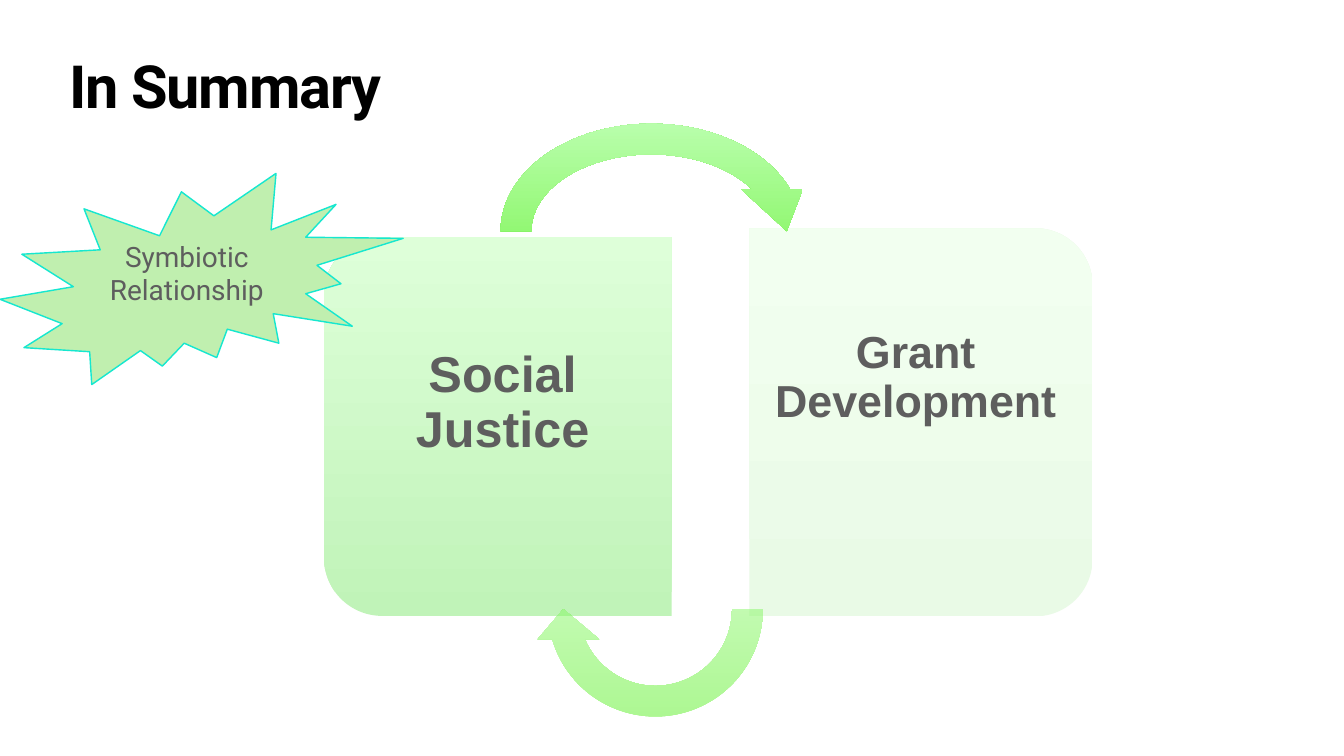
from dataclasses import dataclass

from lxml.etree import SubElement
from pptx import Presentation
from pptx.dml.color import RGBColor
from pptx.enum.shapes import MSO_SHAPE
from pptx.enum.text import MSO_ANCHOR, PP_ALIGN
from pptx.oxml.ns import qn
from pptx.util import Inches, Pt


@dataclass(frozen=True)
class Theme:
    title_font: str = "Roboto"
    panel_font: str = "Arial"
    title_size: int = 85
    justice_size: int = 72
    grant_size: int = 64
    burst_size: int = 40
    title_color: str = "000000"
    text_color: str = "5E5E5E"
    burst_fill: str = "C0EFAF"
    burst_line: str = "16E7CF"
    # Gradients run from bottom to top
    justice_gradient: tuple = ("C0F3B8", "DEFFD9")
    grant_gradient: tuple = ("E9FAE6", "F2FFF0")
    arrow_gradient: tuple = ("56F01E", "B8FFAC")


THEME = Theme()
ARROW_ADJUSTMENTS = (0.125, 11.423, 204.577, 108, 0.125)


def set_attributes(target, values):
    for name, value in values.items():
        setattr(target, name, value)


def write_text(shape, text, font, size, color, bold=False,
               align=PP_ALIGN.CENTER, line_spacing=1.0,
               anchor=MSO_ANCHOR.TOP, insets=(0.06, 0.06, 0.06, 0.06)):
    frame = shape.text_frame
    sides = ("margin_left", "margin_top", "margin_right", "margin_bottom")
    set_attributes(frame, {"word_wrap": True, "vertical_anchor": anchor})
    set_attributes(frame, dict(zip(sides, map(Inches, insets))))
    paragraph = frame.paragraphs[0]
    set_attributes(paragraph, {"alignment": align, "line_spacing": line_spacing})
    run = paragraph.add_run()
    run.text = text
    set_attributes(run.font, {"name": font, "size": Pt(size), "bold": bold})
    run.font.color.rgb = RGBColor.from_string(color)
    return run


def add_plain_shape(slide, kind, box):
    shape = slide.shapes.add_shape(kind, *map(Inches, box))
    shape.shadow.inherit = False
    shape.line.fill.background()
    return shape


def fill_upward(shape, colors, opacity=100):
    """Fill with a gradient that stays upright when the shape is rotated."""
    shape.fill.gradient()
    shape.fill.gradient_angle = 90
    for stop, color in zip(shape.fill.gradient_stops, colors):
        stop.color.rgb = RGBColor.from_string(color)
    gradient = shape._element.spPr.find(qn("a:gradFill"))
    gradient.set("rotWithShape", "0")
    if opacity < 100:
        for color in gradient.iter(qn("a:srgbClr")):
            SubElement(color, qn("a:alpha")).set("val", str(opacity * 1000))


def add_title(slide, box, text):
    title = slide.shapes.title
    sides = ("left", "top", "width", "height")
    set_attributes(title, dict(zip(sides, map(Inches, box))))
    run = write_text(title, text, THEME.title_font, THEME.title_size,
                     THEME.title_color, bold=True, align=PP_ALIGN.LEFT,
                     line_spacing=0.8)
    run._r.get_or_add_rPr().set("spc", "-170")


def add_panel(slide, box, rotation, colors, text, size, text_box, insets):
    """Place a panel rounded on its outer side; text_box is relative to box."""
    left, top, width, height = box
    turn = (width - height) / 2
    panel = add_plain_shape(slide, MSO_SHAPE.ROUND_2_SAME_RECTANGLE,
                            (left + turn, top - turn, height, width))
    panel.rotation = rotation
    panel.adjustments[0] = 0.167
    fill_upward(panel, colors)
    text_left, text_top, text_width, text_height = text_box
    label = slide.shapes.add_textbox(Inches(left + text_left), Inches(top + text_top),
                                     Inches(text_width), Inches(text_height))
    write_text(label, text, THEME.panel_font, size, THEME.text_color,
               bold=True, line_spacing=0.9, insets=insets)


def add_cycle_arrow(slide, box, rotation, opacity):
    arrow = add_plain_shape(slide, MSO_SHAPE.CIRCULAR_ARROW, box)
    arrow.rotation = rotation
    for index, value in enumerate(ARROW_ADJUSTMENTS):
        arrow.adjustments[index] = value
    fill_upward(arrow, THEME.arrow_gradient, opacity)


def add_burst(slide, box, text):
    burst = add_plain_shape(slide, MSO_SHAPE.EXPLOSION2, box)
    burst.fill.solid()
    burst.fill.fore_color.rgb = RGBColor.from_string(THEME.burst_fill)
    burst.line.color.rgb = RGBColor.from_string(THEME.burst_line)
    burst.line.width = Pt(2)
    write_text(burst, text, THEME.title_font, THEME.burst_size, THEME.text_color,
               anchor=MSO_ANCHOR.MIDDLE, insets=(0.06, 0.06, 0.06, 0.45))


def main():
    presentation = Presentation()
    set_attributes(presentation, {"slide_width": Inches(26.67),
                                  "slide_height": Inches(15)})
    slide = presentation.slides.add_slide(presentation.slide_layouts[5])
    add_title(slide, (1.32, 1.18, 24.03, 1.57), "In Summary")
    add_panel(slide, (6.43, 4.7, 6.9, 7.52), 270, THEME.justice_gradient,
              "Social Justice", THEME.justice_size,
              (0.34, 0.33, 6.56, 6.85), (0.3, 2.14, 0.45, 0.5))
    add_panel(slide, (14.87, 4.53, 6.81, 7.7), 90, THEME.grant_gradient,
              "Grant Development", THEME.grant_size,
              (0, 0.33, 6.47, 7.03), (0.4, 1.9, 0.27, 0.44))
    add_cycle_arrow(slide, (9.63, 2.15, 6.59, 4.87), 0, 90)
    add_cycle_arrow(slide, (10.57, 9.65, 4.87, 4.87), 180, 50)
    add_burst(slide, (0, 3.44, 8, 4.19), "Symbiotic Relationship")
    presentation.save("out.pptx")


if __name__ == "__main__":
    main()
